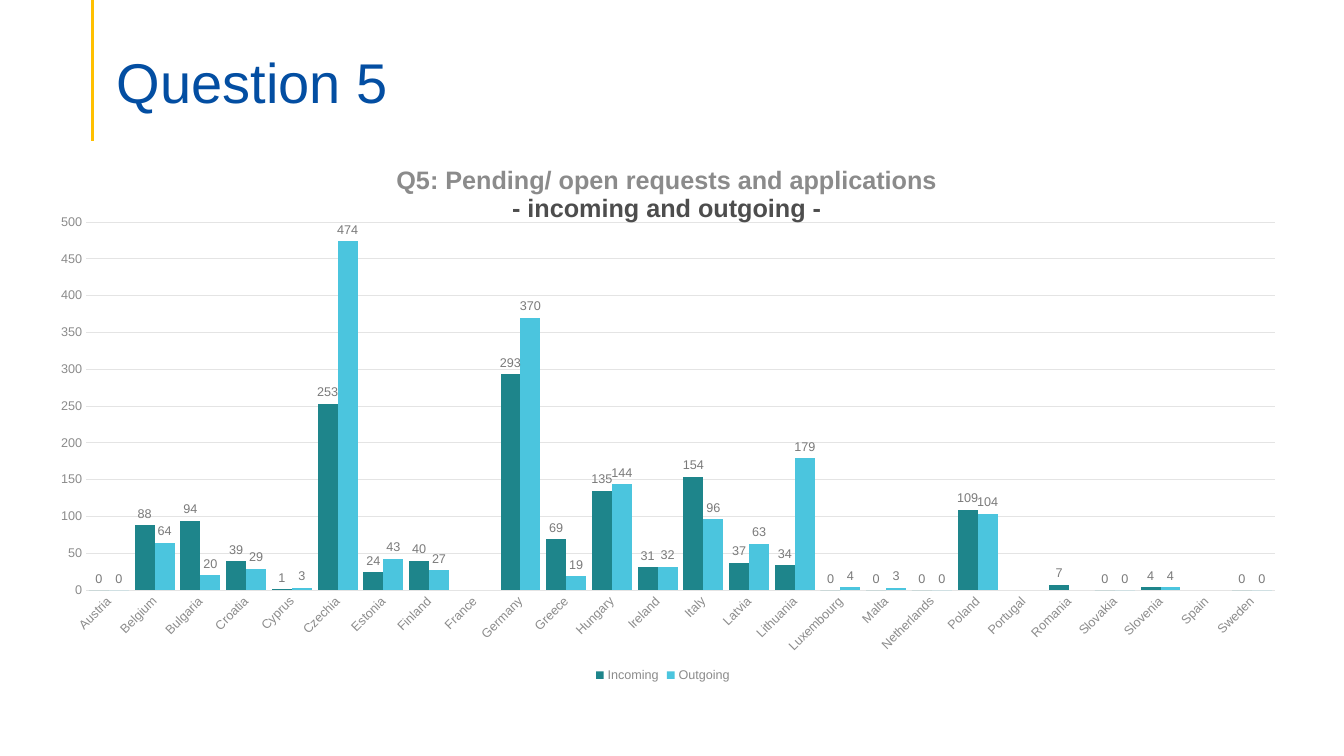
from lxml import etree
from pptx import Presentation, util as u
from pptx.chart.data import CategoryChartData
from pptx.dml.color import RGBColor
from pptx.enum import chart as ch, shapes, text
from pptx.oxml import parse_xml
from pptx.oxml.ns import nsdecls, qn

HEADING = "Question 5"
CHART_TITLE = [
    ("Q5: Pending/ open requests and applications", "subject"),
    ("- incoming and outgoing -", "direction"),
]
SERIES = [("Incoming", "incoming"), ("Outgoing", "outgoing")]
REQUESTS = [
    ("Austria", 0, 0), ("Belgium", 88, 64), ("Bulgaria", 94, 20),
    ("Croatia", 39, 29), ("Cyprus", 1, 3), ("Czechia", 253, 474),
    ("Estonia", 24, 43), ("Finland", 40, 27), ("France", None, None),
    ("Germany", 293, 370), ("Greece", 69, 19), ("Hungary", 135, 144),
    ("Ireland", 31, 32), ("Italy", 154, 96), ("Latvia", 37, 63),
    ("Lithuania", 34, 179), ("Luxembourg", 0, 4), ("Malta", 0, 3),
    ("Netherlands", 0, 0), ("Poland", 109, 104), ("Portugal", None, None),
    ("Romania", 7, None), ("Slovakia", 0, 0), ("Slovenia", 4, 4),
    ("Spain", None, None), ("Sweden", 0, 0),
]

THEME = {
    "font": "Arial",
    "colors": {
        "heading": "034EA2", "accent": "FFC000", "subject": "8B8B8B",
        "direction": "4D4D4D", "axis": "8B8B8B", "label": "7A7A7A",
        "grid": "E4E4E4", "incoming": "1E858B", "outgoing": "4BC5DE",
    },
    "sizes": {"heading": 40, "chart title": 18, "axis": 9},
}
PLOT_LAYOUT = {"layoutTarget": "inner", "xMode": "edge", "yMode": "edge",
               "x": 0.042, "y": 0.15, "w": 0.944, "h": 0.674}
TITLE_LAYOUT = {"xMode": "edge", "yMode": "edge", "x": 0.286, "y": 0.038}


def color(role):
    return RGBColor.from_string(THEME["colors"][role])


def set_all(target, values):
    for name, value in values.items():
        setattr(target, name, value)


def style_font(font, size, role, bold=False):
    set_all(font, {"name": THEME["font"], "bold": bold,
                   "size": u.Pt(THEME["sizes"][size])})
    font.color.rgb = color(role)


def style_line(line, role, width):
    line.color.rgb = color(role)
    line.width = u.Pt(width)


def place_in_chart(part, layout_values):
    """Give a chart part a manual layout, in fractions of the chart area."""
    layout = part.find(qn("c:layout"))
    if layout is None:
        layout = parse_xml(f"<c:layout {nsdecls('c')}/>")
        part.insert(0, layout)
    manual = etree.SubElement(layout, qn("c:manualLayout"))
    for name, value in layout_values.items():
        etree.SubElement(manual, qn(f"c:{name}")).set("val", str(value))


def add_heading(slide):
    rule = slide.shapes.add_connector(
        shapes.MSO_CONNECTOR.STRAIGHT,
        u.Inches(0.92), 0, u.Inches(0.92), u.Inches(1.4))
    style_line(rule.line, "accent", 2.25)
    etree.SubElement(rule._element.spPr, qn("a:effectLst"))

    heading = slide.shapes.title
    set_all(heading, {"left": u.Inches(1.06), "top": u.Inches(0.25),
                      "width": u.Inches(11.5), "height": u.Inches(1.14)})
    frame = heading.text_frame
    frame.text = HEADING
    set_all(frame, {"vertical_anchor": text.MSO_ANCHOR.MIDDLE,
                    "auto_size": text.MSO_AUTO_SIZE.NONE, "word_wrap": True,
                    "margin_left": u.Inches(0.1), "margin_right": u.Inches(0.1),
                    "margin_top": u.Inches(0.05), "margin_bottom": 0})
    paragraph = frame.paragraphs[0]
    set_all(paragraph, {"alignment": text.PP_ALIGN.LEFT, "line_spacing": 0.9})
    style_font(paragraph.runs[0].font, "heading", "heading")


def add_requests_chart(slide):
    countries, *counts = zip(*REQUESTS)
    data = CategoryChartData()
    data.categories = countries
    for (name, _), values in zip(SERIES, counts):
        data.add_series(name, values)
    chart = slide.shapes.add_chart(
        ch.XL_CHART_TYPE.COLUMN_CLUSTERED, u.Inches(0.33), u.Inches(1.39),
        u.Inches(12.49), u.Inches(5.42), data).chart
    style_font(chart.font, "axis", "direction")
    style_chart_title(chart)
    style_columns(chart.plots[0])
    style_axes(chart)
    place_in_chart(chart._chartSpace.chart.plotArea, PLOT_LAYOUT)

    chart.has_legend = True
    set_all(chart.legend, {"position": ch.XL_LEGEND_POSITION.BOTTOM,
                           "include_in_layout": False})
    style_font(chart.legend.font, "axis", "axis")


def style_chart_title(chart):
    frame = chart.chart_title.text_frame
    for index, (line, role) in enumerate(CHART_TITLE):
        paragraph = frame.add_paragraph() if index else frame.paragraphs[0]
        paragraph.alignment = text.PP_ALIGN.CENTER
        run = paragraph.add_run()
        run.text = line
        style_font(run.font, "chart title", role, bold=True)
    place_in_chart(chart.chart_title._element, TITLE_LAYOUT)


def style_columns(plot):
    set_all(plot, {"gap_width": 29, "overlap": 0, "vary_by_categories": False})
    for columns, (_, role) in zip(plot.series, SERIES):
        columns.format.fill.solid()
        columns.format.fill.fore_color.rgb = color(role)
        columns.invert_if_negative = False
        labels = columns.data_labels
        set_all(labels, {"show_value": True,
                         "position": ch.XL_LABEL_POSITION.OUTSIDE_END})
        style_font(labels.font, "axis", "label")


def style_axes(chart):
    for axis in (chart.category_axis, chart.value_axis):
        set_all(axis, {"major_tick_mark": ch.XL_TICK_MARK.NONE,
                       "minor_tick_mark": ch.XL_TICK_MARK.NONE})
        style_font(axis.tick_labels.font, "axis", "axis")
    country_axis, count_axis = chart.category_axis, chart.value_axis
    style_line(country_axis.format.line, "grid", 0.75)
    slant = country_axis._element.find(f"{qn('c:txPr')}/{qn('a:bodyPr')}")
    slant.set("rot", str(-45 * 60000))
    set_all(count_axis, {"minimum_scale": 0, "maximum_scale": 500,
                         "major_unit": 50, "has_major_gridlines": True})
    count_axis.format.line.fill.background()
    style_line(count_axis.major_gridlines.format.line, "grid", 0.75)


def main():
    deck = Presentation()
    set_all(deck, {"slide_width": u.Inches(13.33),
                   "slide_height": u.Inches(7.5)})
    slide = deck.slides.add_slide(deck.slide_layouts.get_by_name("Title Only"))
    add_heading(slide)
    add_requests_chart(slide)
    deck.save("out.pptx")


if __name__ == "__main__":
    main()
